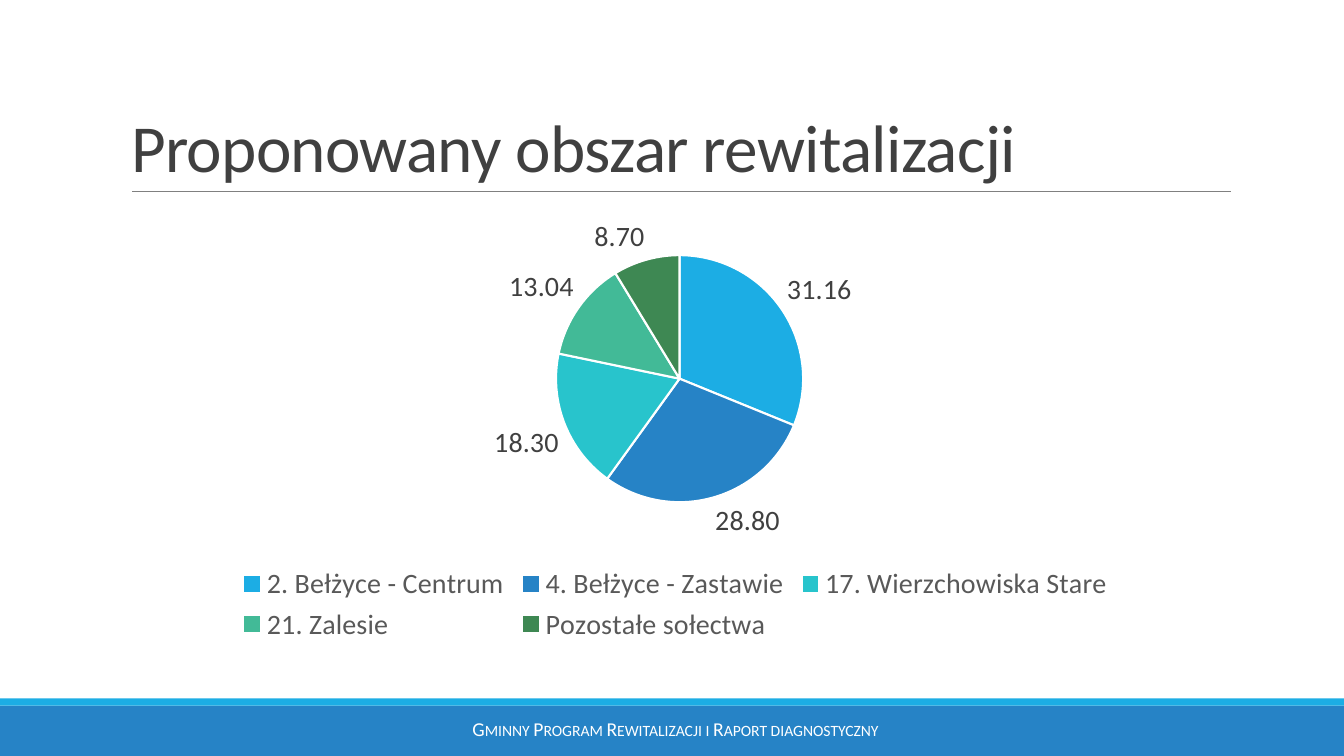
from dataclasses import dataclass

from lxml.etree import SubElement
from pptx import Presentation
from pptx.chart.data import CategoryChartData
from pptx.dml.color import RGBColor
from pptx.enum.chart import XL_CHART_TYPE, XL_LABEL_POSITION, XL_LEGEND_POSITION
from pptx.enum.shapes import MSO_CONNECTOR, MSO_SHAPE
from pptx.enum.text import MSO_ANCHOR, PP_ALIGN
from pptx.oxml.ns import qn
from pptx.slide import Slide
from pptx.text.text import Font, TextFrame
from pptx.util import Inches, Pt

SKY = RGBColor(0x1C, 0xAD, 0xE4)
BLUE = RGBColor(0x26, 0x83, 0xC6)
TEAL = RGBColor(0x28, 0xC4, 0xCC)
MINT = RGBColor(0x42, 0xBA, 0x97)
GREEN = RGBColor(0x3E, 0x88, 0x53)
WHITE = RGBColor(0xFF, 0xFF, 0xFF)
DARK = RGBColor(0x40, 0x40, 0x40)
GRAY = RGBColor(0x59, 0x59, 0x59)
RULE = RGBColor(0x80, 0x80, 0x80)
FACE = "Calibri"


@dataclass(frozen=True)
class Band:
    top: float
    height: float
    color: RGBColor


@dataclass(frozen=True)
class Slice:
    name: str
    value: float
    color: RGBColor


BANDS = [Band(7, 0.5, BLUE), Band(6.93, 0.07, SKY)]
SLICES = [
    Slice("2. Bełżyce - Centrum", 31.16, SKY),
    Slice("4. Bełżyce - Zastawie", 28.8, BLUE),
    Slice("17. Wierzchowiska Stare", 18.3, TEAL),
    Slice("21. Zalesie", 13.04, MINT),
    Slice("Pozostałe sołectwa", 8.7, GREEN),
]


def set_font(font: Font, size: float, color: RGBColor) -> None:
    font.name = FACE
    font.size = Pt(size)
    font.color.rgb = color


def write(frame: TextFrame, text: str, size: float, color: RGBColor,
          align: PP_ALIGN, trait: str, value: str) -> None:
    """Fill a frame with one line and set one extra run trait."""
    frame.word_wrap = True
    line = frame.paragraphs[0]
    line.alignment = align
    run = line.add_run()
    run.text = text
    run._r.get_or_add_rPr().set(trait, value)
    set_font(line.font, size, color)


def add_band(slide: Slide, band: Band) -> None:
    shape = slide.shapes.add_shape(
        MSO_SHAPE.RECTANGLE, 0, Inches(band.top), Inches(13.33), Inches(band.height))
    shape.shadow.inherit = False
    shape.fill.solid()
    shape.fill.fore_color.rgb = band.color
    shape.line.fill.background()


def add_rule(slide: Slide) -> None:
    rule = slide.shapes.add_connector(
        MSO_CONNECTOR.STRAIGHT, Inches(1.31), Inches(1.9), Inches(12.21), Inches(1.9))
    rule.line.color.rgb = RULE
    rule.line.width = Pt(0.5)
    SubElement(rule._element.spPr, qn("a:effectLst"))


def add_title(slide: Slide) -> None:
    title = slide.shapes.title
    title.left, title.top = Inches(1.2), Inches(0.31)
    title.width, title.height = Inches(11), Inches(1.59)
    frame = title.text_frame
    frame.vertical_anchor = MSO_ANCHOR.BOTTOM
    write(frame, "Proponowany obszar rewitalizacji", 48, DARK,
          PP_ALIGN.LEFT, "spc", "-50")
    frame.paragraphs[0].line_spacing = 0.85


def add_foot(slide: Slide) -> None:
    foot = slide.shapes.add_textbox(
        Inches(3.3), Inches(7.06), Inches(6.8), Inches(0.33))
    write(foot.text_frame, "Gminny Program Rewitalizacji i Raport diagnostyczny",
          14, WHITE, PP_ALIGN.CENTER, "cap", "small")


def add_pie(slide: Slide) -> None:
    data = CategoryChartData(number_format="#,##0.00")
    data.categories = [part.name for part in SLICES]
    data.add_series("Series 1", [part.value for part in SLICES])
    chart = slide.shapes.add_chart(
        XL_CHART_TYPE.PIE, Inches(1.2), Inches(2.02), Inches(11), Inches(4.4), data).chart
    set_font(chart.font, 20, DARK)
    chart.has_title = False

    # Legend
    chart.has_legend = True
    chart.legend.position = XL_LEGEND_POSITION.BOTTOM
    chart.legend.include_in_layout = False
    set_font(chart.legend.font, 20, GRAY)

    # Slices
    plot = chart.plots[0]
    plot.vary_by_categories = True
    for index, part in enumerate(SLICES):
        look = plot.series[0].points[index].format
        look.fill.solid()
        look.fill.fore_color.rgb = part.color
        look.line.color.rgb = WHITE
        look.line.width = Pt(1.5)

    # Value labels
    labels = plot.series[0].data_labels
    labels.show_value = True
    labels.number_format = "#,##0.00"
    labels.number_format_is_linked = False
    labels.position = XL_LABEL_POSITION.OUTSIDE_END
    set_font(labels.font, 20, DARK)


def main() -> None:
    deck = Presentation()
    deck.slide_width, deck.slide_height = Inches(13.33), Inches(7.5)
    slide = deck.slides.add_slide(deck.slide_layouts[5])
    for band in BANDS:
        add_band(slide, band)
    add_rule(slide)
    add_foot(slide)
    add_title(slide)
    add_pie(slide)
    deck.save("out.pptx")


if __name__ == "__main__":
    main()
